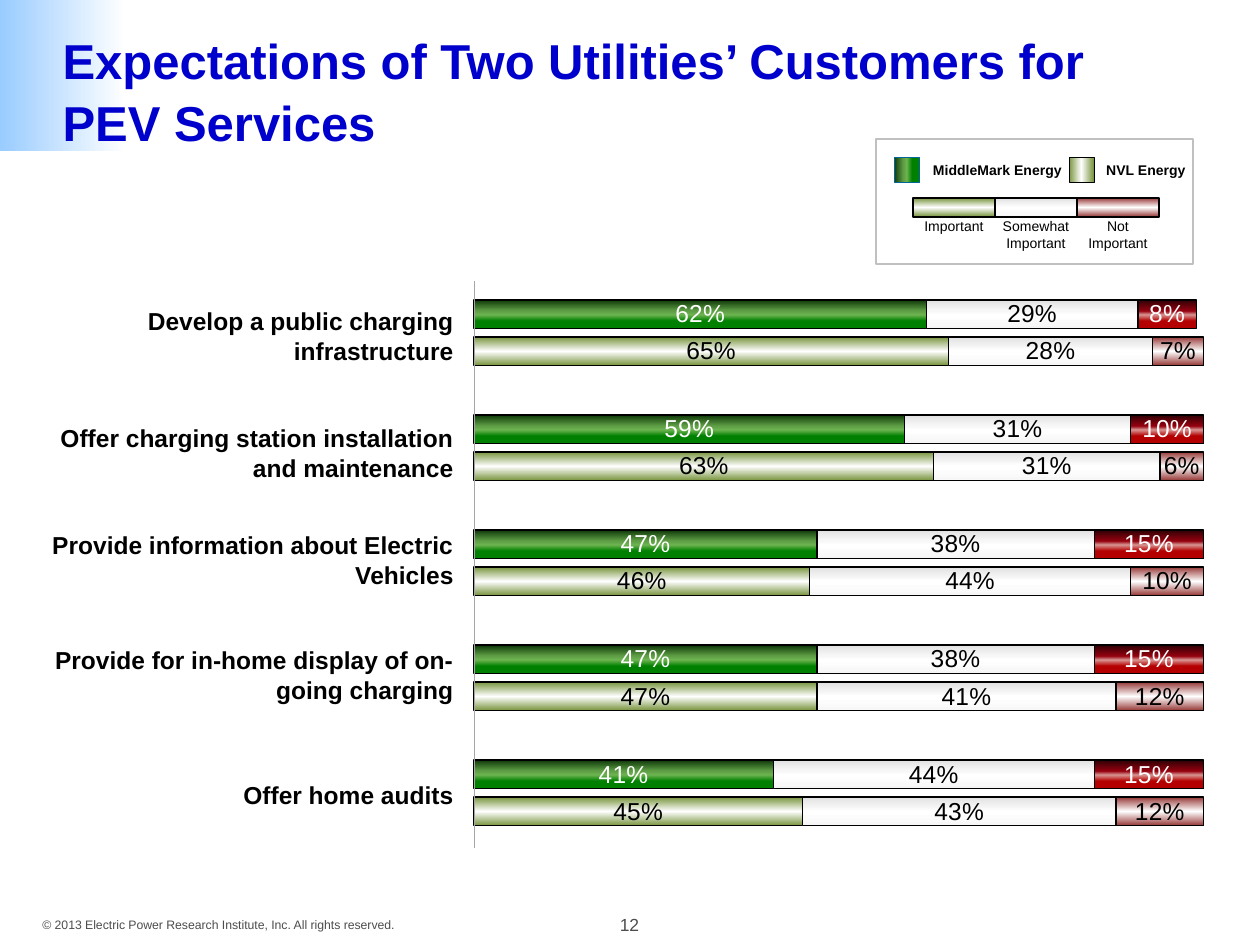
from lxml.etree import SubElement
from pptx import Presentation
from pptx.chart.data import CategoryChartData
from pptx.dml.color import RGBColor
from pptx.enum.chart import XL_CHART_TYPE, XL_LABEL_POSITION
from pptx.enum.shapes import MSO_CONNECTOR, MSO_SHAPE
from pptx.enum.text import MSO_ANCHOR, PP_ALIGN
from pptx.oxml import parse_xml
from pptx.oxml.ns import nsdecls, qn
from pptx.util import Emu, Pt

SCALE = 914400 / 126
FONT = "Arial"
HEX = {
    "title": "0000CC", "text": "000000", "white": "FFFFFF", "foot": "4D4D4D",
    "axis": "A6A6A6", "frame": "C0C0C0", "edge": "006699",
}
BLENDS = {
    "sky": [(0, "FFFFFF"), (100, "99CCFF")],
    "olive": [(0, "77933C"), (50, "FFFFFF"), (100, "77933C")],
    "pale": [(0, "E1E1E1"), (50, "FFFFFF"), (100, "F7F7F7")],
    "rose": [(0, "953735"), (50, "FFFFFF"), (100, "953735")],
    "green": [(0, "0D3608"), (37, "5C9B43"), (52, "6DB450"), (73, "008000")],
    "grey": [(0, "E1E1E1"), (37, "F7F7F7"), (52, "FFFFFF"), (100, "F5F5F5")],
    "red": [(0, "2D0105"), (39, "95010F"), (52, "D99694"), (73, "B40000")],
}
LOWER = [
    ("olive", "text", (0.45, 0.47, 0.46, 0.63, 0.65)),
    ("pale", "text", (0.43, 0.41, 0.44, 0.31, 0.28)),
    ("rose", "text", (0.12, 0.12, 0.10, 0.06, 0.07)),
]
UPPER = [
    ("green", "white", (0.41, 0.47, 0.47, 0.59, 0.62)),
    ("grey", "text", (0.44, 0.38, 0.38, 0.31, 0.29)),
    ("red", "white", (0.15, 0.15, 0.15, 0.10, 0.08)),
]
ROWS = [
    (300, "Develop a public charging infrastructure"),
    (417, "Offer charging station installation and maintenance"),
    (524, "Provide information about Electric Vehicles"),
    (639, "Provide for in-home display of on-going charging"),
    (774, "Offer home audits"),
]
LEVELS = [("olive", "Important"), ("pale", "Somewhat Important"), ("rose", "Not Important")]


def px(num):
    return Emu(round(num * SCALE))


def tint(name):
    return RGBColor.from_string(HEX[name])


def style(font, size, color, bold=False):
    font.name, font.size, font.bold = FONT, Pt(size), bold
    font.color.rgb = tint(color)


def blend(fill, props, name, angle):
    fill.gradient()
    grad = props.find(qn("a:gradFill"))
    for child in list(grad):
        grad.remove(child)
    stops = SubElement(grad, qn("a:gsLst"))
    for pos, color in BLENDS[name]:
        stop = SubElement(stops, qn("a:gs"), pos=str(pos * 1000))
        SubElement(stop, qn("a:srgbClr"), val=color)
    SubElement(grad, qn("a:lin"), ang=str(angle * 60000), scaled="0")


def add_box(slide, area, line=None, width=0.75, name=None, angle=90):
    box = slide.shapes.add_shape(MSO_SHAPE.RECTANGLE, *map(px, area))
    box.shadow.inherit = False
    if name:
        blend(box.fill, box._element.spPr, name, angle)
    else:
        box.fill.solid()
        box.fill.fore_color.rgb = tint("white")
    if line:
        box.line.color.rgb = tint(line)
        box.line.width = Pt(width)
    else:
        box.line.fill.background()


def add_text(slide, area, text, size, align, color="text", bold=False, wrap=True, inset=None):
    frame = slide.shapes.add_textbox(*map(px, area)).text_frame
    frame.word_wrap = wrap
    if inset is not None:
        frame.margin_left = frame.margin_right = px(inset)
        frame.margin_top = frame.margin_bottom = px(inset)
    para = frame.paragraphs[0]
    para.alignment = align
    run = para.add_run()
    run.text = text
    style(run.font, size, color, bold)


def add_title(slide, text):
    title = slide.shapes.title
    title.left, title.top, title.width, title.height = map(px, (50, 25, 1138, 126))
    frame = title.text_frame
    frame.word_wrap = True
    frame.vertical_anchor = MSO_ANCHOR.BOTTOM
    frame.margin_bottom = 0
    para = frame.paragraphs[0]
    para.alignment = PP_ALIGN.LEFT
    para.line_spacing = 1.05
    run = para.add_run()
    run.text = text
    style(run.font, 28, "title", True)


def place_plot(chart):
    plot = chart._chartSpace.chart.plotArea
    for old in plot.findall(qn("c:layout")):
        plot.remove(old)
    spots = {"x": 0.033, "y": 0.034, "w": 0.958, "h": 0.937}
    modes = '<c:layoutTarget val="inner"/><c:xMode val="edge"/><c:yMode val="edge"/>'
    sizes = "".join(f'<c:{key} val="{val}"/>' for key, val in spots.items())
    plot.insert(0, parse_xml(
        f'<c:layout {nsdecls("c")}><c:manualLayout>{modes}{sizes}</c:manualLayout></c:layout>'))


def add_bars(slide, top, parts):
    data = CategoryChartData(number_format="0%")
    data.categories = ["1", "2", "3", "4", "5"]
    for num, (_, _, vals) in enumerate(parts, 1):
        data.add_series(f"Series {num}", vals)
    area = map(px, (444, top, 914, 614))
    chart = slide.shapes.add_chart(XL_CHART_TYPE.BAR_STACKED, *area, data).chart
    chart.has_legend = chart.has_title = False
    style(chart.font, 10, "text")
    chart.category_axis.visible = False
    axis = chart.value_axis
    axis.visible = axis.has_major_gridlines = False
    axis.minimum_scale, axis.maximum_scale = 0, 1.2
    plot = chart.plots[0]
    plot.gap_width, plot.overlap = 300, 100
    plot.vary_by_categories = False
    for series, (name, color, _) in zip(plot.series, parts):
        look = series.format
        blend(look.fill, series._element.get_or_add_spPr(), name, 90)
        look.line.color.rgb = tint("text")
        look.line.width = Pt(0.75)
        labels = series.data_labels
        labels.show_value = True
        labels.number_format, labels.number_format_is_linked = "0%", False
        labels.position = XL_LABEL_POSITION.CENTER
        style(labels.font, 14, color)
    place_plot(chart)


def add_line(slide, ends):
    line = slide.shapes.add_connector(MSO_CONNECTOR.STRAIGHT, *map(px, ends))
    line.line.color.rgb = tint("axis")
    line.line.width = Pt(0.1)
    SubElement(line._element.spPr, qn("a:effectLst"))


def add_key(slide):
    mid = PP_ALIGN.CENTER
    add_box(slide, (876, 139, 317, 125), "frame")
    for num, (name, text) in enumerate(LEVELS):
        left = 913 + 82 * num
        add_box(slide, (left, 198, 82, 19), "text", name=name)
        add_text(slide, (left + 4, 217, 74, 36), text, 8, mid, inset=1)
    add_text(slide, (876, 155, 243, 30), "MiddleMark Energy", 8, mid, bold=True)
    add_text(slide, (1032, 155, 228, 30), "NVL Energy", 8, mid, bold=True)
    add_box(slide, (894, 157, 25, 25), "edge", 0.25, "green", 0)
    add_box(slide, (1069, 157, 25, 25), "text", 0.25, "olive", 180)


def main():
    deck = Presentation()
    deck.slide_width, deck.slide_height = px(1260), px(945)
    slide = deck.slides.add_slide(deck.slide_layouts[5])
    add_box(slide, (0, 0, 126, 151), name="sky", angle=180)
    title = slide.shapes.title._element
    title.getparent().append(title)
    add_title(slide, "Expectations of Two Utilities’ Customers for PEV Services")
    add_text(slide, (588, 908, 83, 34), "12", 10, PP_ALIGN.CENTER, "foot")
    add_text(slide, (30, 911, 381, 28),
             "© 2013 Electric Power Research Institute, Inc. All rights reserved.",
             7, PP_ALIGN.LEFT, "foot", wrap=False)
    add_bars(slide, 273, LOWER)
    add_bars(slide, 236, UPPER)
    for top, text in ROWS:
        add_text(slide, (0, top, 466, 72), text, 14, PP_ALIGN.RIGHT, bold=True)
    add_line(slide, (474, 281, 474, 848))
    add_key(slide)
    deck.save("out.pptx")


if __name__ == "__main__":
    main()
